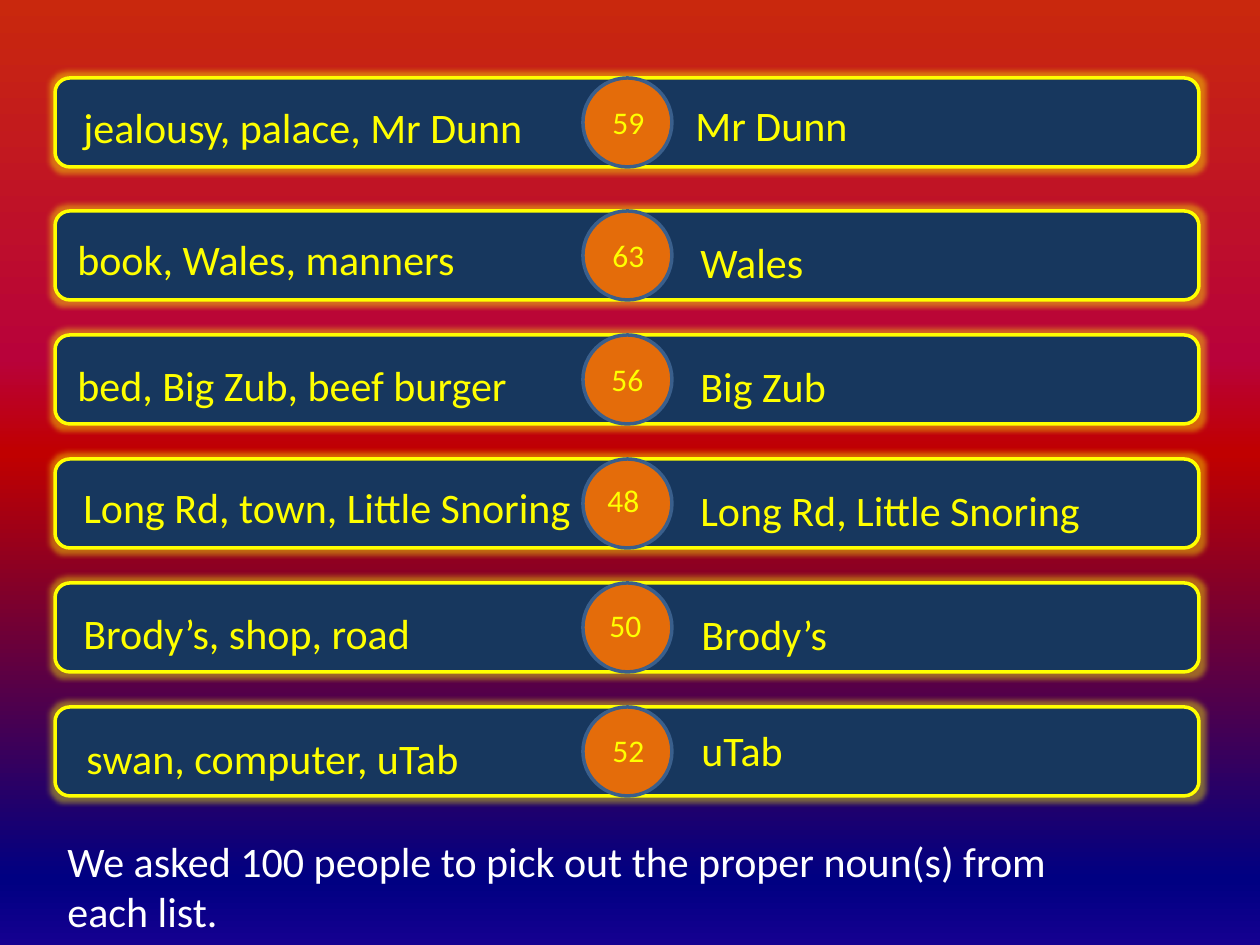
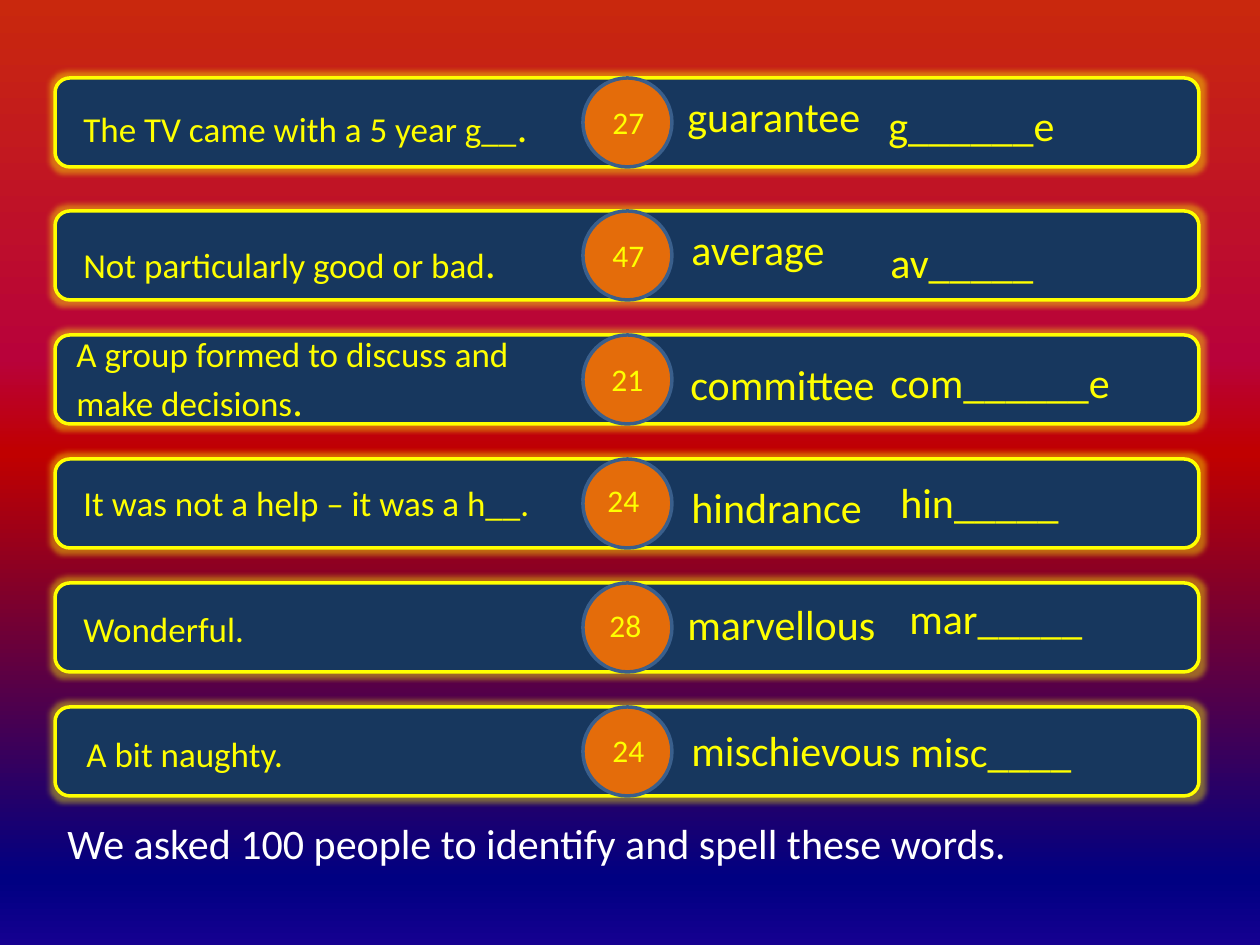
import pptx
import pptx.util
import pptx.dml.color
import pptx.enum.shapes
import pptx.enum.text
import pptx.oxml
import pptx.oxml.ns

RGBColor = pptx.dml.color.RGBColor
Shapes = pptx.enum.shapes.MSO_SHAPE

# Scale: 126 px to the inch
PX = 914400 // 126
SLIDE_W, SLIDE_H = 1260, 945

# Colours and type
NAVY = RGBColor(0x17, 0x37, 0x5E)
YELLOW = RGBColor(0xFF, 0xFF, 0x00)
ORANGE = RGBColor(0xE4, 0x6C, 0x0A)
STEEL = RGBColor(0x3A, 0x5F, 0x8C)
WHITE = RGBColor(0xFF, 0xFF, 0xFF)
SUNSET = [
    (0, RGBColor(0xC9, 0x28, 0x0D)),
    (38, RGBColor(0xB8, 0x02, 0x3A)),
    (48, RGBColor(0xC0, 0x00, 0x00)),
    (93, RGBColor(0x00, 0x00, 0x82)),
    (100, RGBColor(0x15, 0x00, 0x90)),
]
FONT = "Calibri"
BIG, MEDIUM, SMALL = 24, 20, 18

# Rows: the first stands apart, the others are evenly spaced
ROW_TOPS = [78] + [211 + 124 * i for i in range(5)]
ROW_H = 89
BAR_LEFT, BAR_W = 55, 1144
DISC_LEFT = 583
SCORE_PLACES = [(600, 97), (600, 230), (599, 354),
                (595, 475), (597, 600), (600, 725)]
SCORE_W = 59
PROMPT_LEFT, PROMPT_W = 55, 1052

# Texts: (left, top, width, runs), each run being (text, size)
NOUN_SCORES = ["59", "63", "56", "48", "50", "52"]
NOUN_LISTS = [
    (71, 95, 500, [("jealousy, palace, Mr Dunn", BIG)]),
    (65, 227, 495, [("book, Wales, manners", BIG)]),
    (65, 353, 485, [("bed, Big Zub, beef burger", BIG)]),
    (71, 475, 529, [("Long Rd, town, Little Snoring", BIG)]),
    (71, 601, 421, [("Brody’s, shop, road", BIG)]),
    (74, 726, 446, [("swan, computer, uTab", BIG)]),
]
PROPER_NOUNS = [
    (683, 93, 220, [("Mr Dunn", BIG)]),
    (688, 230, 140, [("Wales", BIG)]),
    (688, 354, 180, [("Big Zub", BIG)]),
    (688, 478, 420, [("Long Rd, Little Snoring", BIG)]),
    (689, 602, 169, [("Brody’s", BIG)]),
    (689, 718, 130, [("uTab", BIG)]),
]

SPELLING_SCORES = ["27", "47", "21", "24", "28", "24"]
CLUES = [
    (71, 94, 480, [("The TV came with a 5 year g__", MEDIUM), (".", BIG)]),
    (71, 230, 461, [("Not particularly good or bad", MEDIUM), (".", BIG)]),
    (64, 326, 518, [("A group formed to discuss and make decisions", MEDIUM),
                    (".", BIG)]),
    (71, 475, 499, [("It was not a help – it was a h__.", MEDIUM)]),
    (71, 601, 301, [("Wonderful.", MEDIUM)]),
    (74, 726, 348, [("A bit naughty.", MEDIUM)]),
]
SPELLINGS = [
    (675, 84, 203, [("guarantee", BIG)]),
    (679, 217, 210, [("average", BIG)]),
    (678, 352, 219, [("committee", BIG)]),
    (679, 475, 247, [("hindrance", BIG)]),
    (675, 592, 243, [("marvellous", BIG)]),
    (679, 718, 247, [("mischievous", BIG)]),
]
HINTS = [
    (876, 93, 213, [("g______e", BIG)]),
    (878, 230, 218, [("av_____", BIG)]),
    (878, 350, 258, [("com______e", BIG)]),
    (888, 470, 189, [("hin_____", BIG)]),
    (897, 586, 208, [("mar_____", BIG)]),
    (898, 719, 228, [("misc____", BIG)]),
]


def paint_background(slide):
    fill = slide.background.fill
    fill.gradient()
    fill.gradient_angle = 270
    stops = slide.background._cSld.find(".//" + pptx.oxml.ns.qn("a:gsLst"))
    for stop in list(stops):
        stops.remove(stop)
    for percent, colour in SUNSET:
        stops.append(pptx.oxml.parse_xml(
            f'<a:gs {pptx.oxml.ns.nsdecls("a")} pos="{percent * 1000}">'
            f'<a:srgbClr val="{colour}"/></a:gs>'))


def add_panel(slide, kind, left, top, width, height, fill, line):
    panel = slide.shapes.add_shape(
        kind, left * PX, top * PX, width * PX, height * PX)
    panel.shadow.inherit = False
    panel.fill.solid()
    panel.fill.fore_color.rgb = fill
    panel.line.color.rgb = line
    panel.line.width = pptx.util.Pt(2)
    return panel


def add_glow(panel, colour):
    effects = panel._element.spPr.find(pptx.oxml.ns.qn("a:effectLst"))
    effects.append(pptx.oxml.parse_xml(
        f'<a:glow {pptx.oxml.ns.nsdecls("a")} rad="63500">'
        f'<a:srgbClr val="{colour}"><a:alpha val="40000"/></a:srgbClr>'
        '</a:glow>'))


def add_text(slide, left, top, width, runs, colour=YELLOW):
    # Line height is 1.2 times the size, at 1.75 px to the point
    height = round(max(size for _, size in runs) * 1.2 * 1.75) + 13
    label = slide.shapes.add_textbox(
        left * PX, top * PX, width * PX, height * PX)
    frame = label.text_frame
    frame.word_wrap = True
    frame.auto_size = pptx.enum.text.MSO_AUTO_SIZE.SHAPE_TO_FIT_TEXT
    for text, size in runs:
        run = frame.paragraphs[0].add_run()
        run.text = text
        run.font.name = FONT
        run.font.size = pptx.util.Pt(size)
        run.font.color.rgb = colour


def add_board(deck, scores, columns, prompt, prompt_top):
    slide = deck.slides.add_slide(deck.slide_layouts[6])
    paint_background(slide)

    # Bars, then the score discs over them
    for top in ROW_TOPS:
        bar = add_panel(slide, Shapes.ROUNDED_RECTANGLE,
                        BAR_LEFT, top, BAR_W, ROW_H, NAVY, YELLOW)
        add_glow(bar, YELLOW)
    for top in ROW_TOPS:
        add_panel(slide, Shapes.OVAL,
                  DISC_LEFT, top, ROW_H, ROW_H, ORANGE, STEEL)

    # Questions, answers and scores
    for column in columns:
        for entry in column:
            add_text(slide, *entry)
    for (left, top), score in zip(SCORE_PLACES, scores):
        add_text(slide, left, top, SCORE_W, [(score, SMALL)])

    # Prompt under the board
    add_text(slide, PROMPT_LEFT, prompt_top, PROMPT_W,
             [(prompt, BIG)], WHITE)


def main():
    deck = pptx.Presentation()
    deck.slide_width = SLIDE_W * PX
    deck.slide_height = SLIDE_H * PX
    add_board(deck, NOUN_SCORES, [NOUN_LISTS, PROPER_NOUNS],
              "We asked 100 people to pick out the proper noun(s) "
              "from each list.", 829)
    add_board(deck, SPELLING_SCORES, [CLUES, SPELLINGS, HINTS],
              "We asked 100 people to identify and spell these words.", 811)
    deck.save("out.pptx")


if __name__ == "__main__":
    main()
